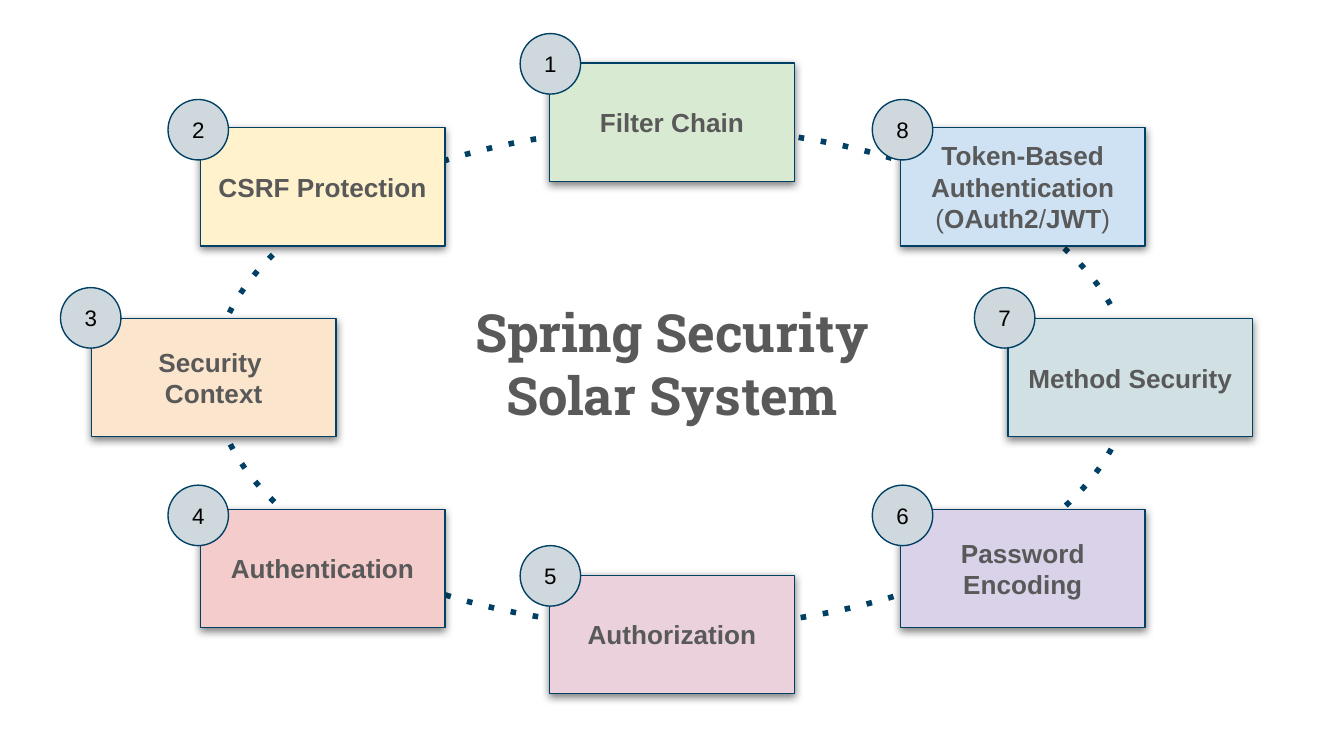
import pptx
import pptx.dml.color
import pptx.enum.shapes
import pptx.enum.text
import pptx.oxml.ns
import pptx.util
from lxml import etree

Inches = pptx.util.Inches
Pt = pptx.util.Pt
qn = pptx.oxml.ns.qn
SHAPE = pptx.enum.shapes.MSO_SHAPE
ANCHOR = pptx.enum.text.MSO_ANCHOR

COLORS = {
    "navy": "004065", "gray": "595959", "black": "000000", "badge": "CFD8DC",
    "green": "D9EAD3", "yellow": "FFF2CC", "orange": "FCE5CD", "red": "F4CCCC",
    "pink": "EAD1DC", "purple": "D9D2E9", "teal": "D0E0E3", "blue": "CFE2F3",
}

# Column and row offsets within the cycle's box
CARD_X = [0.23, 1.04, 3.64, 6.25, 7.05]
CARD_Y = [0.22, 0.70, 2.12, 3.54, 4.03]
BADGE_X = [0, 0.80, 3.42, 6.04, 6.80]
BADGE_Y = [0, 0.49, 1.89, 3.36, 3.81]
CARD_W, CARD_H, BADGE_SIZE = 1.82, 0.88, 0.45

# Column, row, fill and paragraphs of (text, bold) runs, in numbered order
STEPS = [
    (2, 0, "green", [[("Filter Chain", True)]]),
    (1, 1, "yellow", [[("CSRF Protection", True)]]),
    (0, 2, "orange", [[("Security ", True)], [("Context", True)]]),
    (1, 3, "red", [[("Authentication", True)]]),
    (2, 4, "pink", [[("Authorization", True)]]),
    (3, 3, "purple", [[("Password Encoding", True)]]),
    (4, 2, "teal", [[("Method Security", True)]]),
    (3, 1, "blue", [[("Token-Based Authentication ", True), ("(", False),
                     ("OAuth2", True), ("/", False), ("JWT", True), (")", False)]]),
]


def rgb(name):
    return pptx.dml.color.RGBColor.from_string(COLORS[name])


def write_text(shape, paragraphs, size, color, font="Arial", anchor=ANCHOR.MIDDLE):
    frame = shape.text_frame
    frame.word_wrap = True
    frame.vertical_anchor = anchor
    frame.margin_left = frame.margin_right = Inches(0.1)
    frame.margin_top = frame.margin_bottom = Inches(0.1)
    for index, runs in enumerate(paragraphs):
        paragraph = frame.add_paragraph() if index else frame.paragraphs[0]
        paragraph.alignment = pptx.enum.text.PP_ALIGN.CENTER
        for words, bold in runs:
            run = paragraph.add_run()
            run.text = words
            run.font.name = font
            run.font.size = Pt(size)
            run.font.bold = bold
            run.font.color.rgb = rgb(color)


def add_outlined(slide, kind, left, top, width, height, fill=None, weight=0.75):
    shape = slide.shapes.add_shape(
        kind, Inches(left), Inches(top), Inches(width), Inches(height))
    shape.shadow.inherit = False
    if fill:
        shape.fill.solid()
        shape.fill.fore_color.rgb = rgb(fill)
    else:
        shape.fill.background()
    shape.line.color.rgb = rgb("navy")
    shape.line.width = Pt(weight)
    return shape


def add_drop_shadow(shape):
    effects = shape.element.spPr.find(qn("a:effectLst"))
    shadow = etree.SubElement(
        effects, qn("a:outerShdw"), blurRad=str(Pt(4.5)), dist=str(Pt(1.5)),
        dir="5400000", algn="bl", rotWithShape="0")
    tint = etree.SubElement(shadow, qn("a:srgbClr"), val=COLORS["black"])
    etree.SubElement(tint, qn("a:alpha"), val="50000")


def add_title(slide, left, top, width, height):
    title = slide.shapes.add_textbox(
        Inches(left), Inches(top), Inches(width), Inches(height))
    write_text(title, [[("Spring Security", True)], [("Solar System", True)]],
               size=28.2, color="gray", font="Roboto Slab", anchor=ANCHOR.BOTTOM)


def add_orbit(slide, left, top, width, height):
    orbit = add_outlined(slide, SHAPE.OVAL, left, top, width, height, weight=3)
    outline = orbit.element.spPr.find(qn("a:ln"))
    etree.SubElement(outline, qn("a:prstDash"), val="dot")


def add_cycle(slide, left, top):
    # Cards
    for column, row, fill, paragraphs in STEPS:
        card = add_outlined(slide, SHAPE.RECTANGLE, left + CARD_X[column],
                            top + CARD_Y[row], CARD_W, CARD_H, fill)
        add_drop_shadow(card)
        write_text(card, paragraphs, size=14, color="gray")

    # Numbered badges over the cards' top left corners
    for number, (column, row, _, _) in enumerate(STEPS, start=1):
        badge = add_outlined(slide, SHAPE.OVAL, left + BADGE_X[column],
                             top + BADGE_Y[row], BADGE_SIZE, BADGE_SIZE, "badge")
        write_text(badge, [[(str(number), False)]], size=12, color="black")


def main():
    deck = pptx.Presentation()
    # Widescreen, 16:9
    deck.slide_width = Inches(10)
    deck.slide_height = Inches(10 * 9 / 16)
    slide = deck.slides.add_slide(deck.slide_layouts[6])
    add_orbit(slide, 1.59, 0.95, 6.82, 3.72)
    add_title(slide, 2.67, 2.35, 4.66, 0.92)
    add_cycle(slide, 0.45, 0.25)
    deck.save("out.pptx")


if __name__ == "__main__":
    main()
